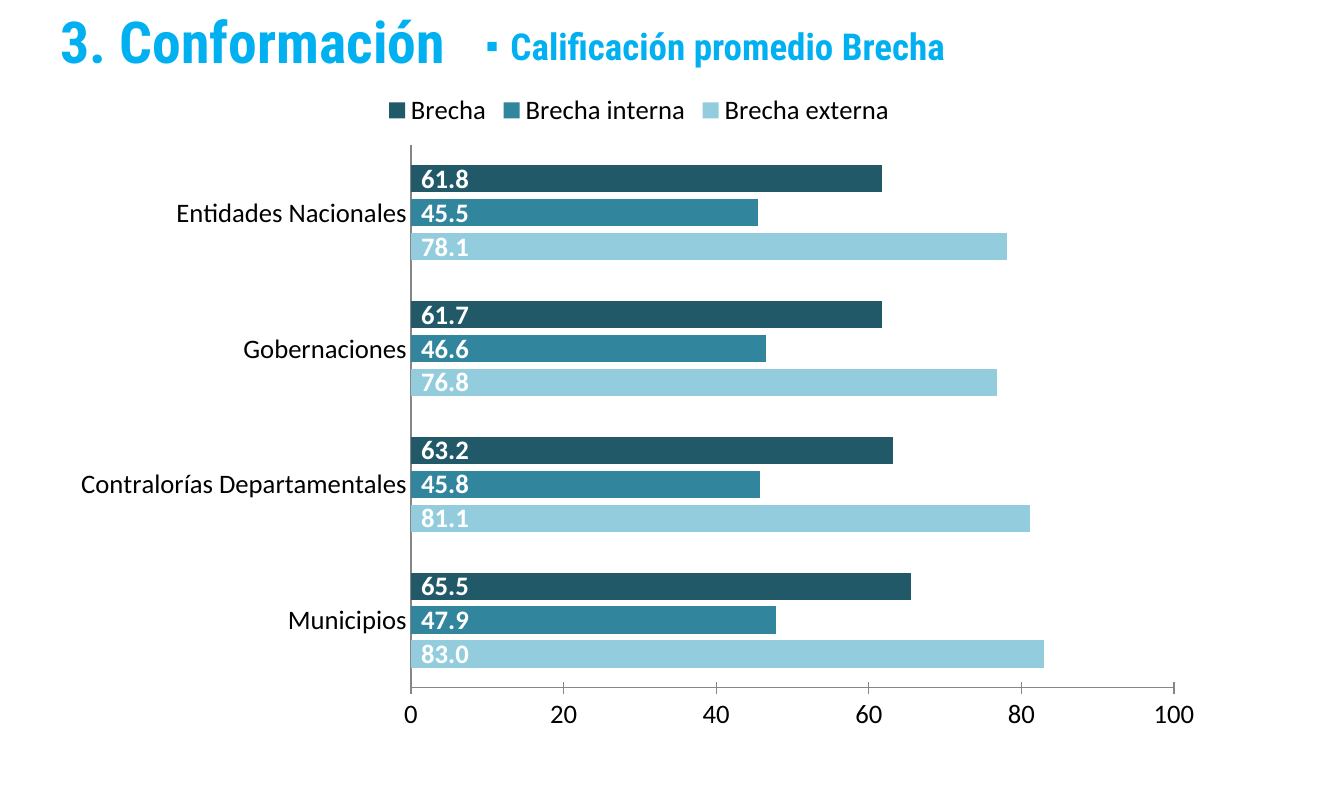
from dataclasses import dataclass

from lxml import etree
from pptx import Presentation
from pptx.chart.chart import Chart
from pptx.chart.data import CategoryChartData
from pptx.dml.color import RGBColor
from pptx.enum.chart import (XL_CHART_TYPE, XL_LABEL_POSITION,
                             XL_LEGEND_POSITION, XL_TICK_MARK)
from pptx.oxml.ns import qn
from pptx.slide import Slide
from pptx.text.text import _Paragraph
from pptx.util import Emu, Pt

EMU_PER_PX = 8572.5
BLACK = RGBColor(0x00, 0x00, 0x00)
WHITE = RGBColor(0xFF, 0xFF, 0xFF)
GRAY = RGBColor(0x86, 0x86, 0x86)
SKY = RGBColor(0x00, 0xB0, 0xF0)
PALE_TEAL = RGBColor(0x93, 0xCD, 0xDD)
TEAL = RGBColor(0x31, 0x85, 0x9C)
DARK_TEAL = RGBColor(0x21, 0x59, 0x68)


@dataclass(frozen=True)
class Box:
    left: int
    top: int
    width: int
    height: int


@dataclass(frozen=True)
class Heading:
    text: str
    box: Box
    size: int
    margin: int
    indent: int = 0
    bullet: str = ""


@dataclass(frozen=True)
class GapSeries:
    name: str
    values: tuple[float, ...]
    color: RGBColor


HEADINGS = (
    Heading("3. Conformación", Box(0, 0, 1210, 114), 39, 50),
    Heading("Calificación promedio Brecha", Box(101, 18, 1210, 67), 25, 399, -25, "▪"),
)
CHART_BOX = Box(59, 81, 1160, 664)
PLOT_BOX = Box(411, 145, 763, 543)
ENTITIES = ("Municipios", "Contralorías Departamentales",
            "Gobernaciones", "Entidades Nacionales")
GAP_SERIES = (
    GapSeries("Brecha externa", (83.0, 81.1, 76.8, 78.1), PALE_TEAL),
    GapSeries("Brecha interna", (47.9, 45.8, 46.6, 45.5), TEAL),
    GapSeries("Brecha", (65.5, 63.2, 61.7, 61.8), DARK_TEAL),
)


def px(length: int) -> Emu:
    return Emu(round(length * EMU_PER_PX))


def place(box: Box) -> tuple[Emu, Emu, Emu, Emu]:
    return px(box.left), px(box.top), px(box.width), px(box.height)


def set_indent(paragraph: _Paragraph, heading: Heading) -> None:
    properties = paragraph._p.get_or_add_pPr()
    properties.set("marL", str(px(heading.margin)))
    properties.set("indent", str(px(heading.indent)))
    if heading.bullet:
        etree.SubElement(properties, qn("a:buFont")).set("typeface", "Arial")
        etree.SubElement(properties, qn("a:buChar")).set("char", heading.bullet)


def add_heading(slide: Slide, heading: Heading) -> None:
    text_frame = slide.shapes.add_textbox(*place(heading.box)).text_frame
    text_frame.word_wrap = True
    text_frame.text = heading.text
    paragraph = text_frame.paragraphs[0]
    set_indent(paragraph, heading)
    font = paragraph.runs[0].font
    font.name = "Roboto Condensed"
    font.size = Pt(heading.size)
    font.bold = True
    font.color.rgb = SKY


def fix_plot_area(chart: Chart) -> None:
    """Pin the inner plot area to PLOT_BOX, as fractions of the chart."""
    plot_area = chart._chartSpace.chart.plotArea
    for automatic_layout in plot_area.findall(qn("c:layout")):
        plot_area.remove(automatic_layout)
    layout = etree.Element(qn("c:layout"))
    plot_area.insert(0, layout)
    manual = etree.SubElement(layout, qn("c:manualLayout"))
    settings = {
        "layoutTarget": "inner", "xMode": "edge", "yMode": "edge",
        "x": (PLOT_BOX.left - CHART_BOX.left) / CHART_BOX.width,
        "y": (PLOT_BOX.top - CHART_BOX.top) / CHART_BOX.height,
        "w": PLOT_BOX.width / CHART_BOX.width,
        "h": PLOT_BOX.height / CHART_BOX.height,
    }
    for name, value in settings.items():
        etree.SubElement(manual, qn(f"c:{name}")).set("val", str(value))


def format_axes(chart: Chart) -> None:
    for axis in (chart.category_axis, chart.value_axis):
        axis.has_major_gridlines = False
        axis.minor_tick_mark = XL_TICK_MARK.NONE
        axis.format.line.color.rgb = GRAY
        axis.format.line.width = Pt(0.75)
    chart.category_axis.major_tick_mark = XL_TICK_MARK.NONE
    value_axis = chart.value_axis
    value_axis.major_tick_mark = XL_TICK_MARK.CROSS
    value_axis.minimum_scale = 0
    value_axis.maximum_scale = 100
    value_axis.major_unit = 20
    value_axis.tick_labels.number_format = "#,##0"
    value_axis.tick_labels.number_format_is_linked = False


def format_series(chart: Chart) -> None:
    plot = chart.plots[0]
    plot.vary_by_categories = False
    plot.gap_width = 150
    plot.overlap = -25
    for series, gap_series in zip(plot.series, GAP_SERIES):
        series.format.fill.solid()
        series.format.fill.fore_color.rgb = gap_series.color
        labels = series.data_labels
        labels.show_value = True
        labels.position = XL_LABEL_POSITION.INSIDE_BASE
        labels.number_format = "_(* #,##0.0_)"
        labels.number_format_is_linked = False
        labels.font.size = Pt(18)
        labels.font.bold = True
        labels.font.color.rgb = WHITE


def add_gap_chart(slide: Slide) -> None:
    chart_data = CategoryChartData()
    chart_data.categories = ENTITIES
    for gap_series in GAP_SERIES:
        chart_data.add_series(gap_series.name, gap_series.values)
    chart = slide.shapes.add_chart(
        XL_CHART_TYPE.BAR_CLUSTERED, *place(CHART_BOX), chart_data).chart
    chart.has_title = False
    chart.font.name = "Calibri"
    chart.font.size = Pt(18)
    chart.font.color.rgb = BLACK
    chart.has_legend = True
    chart.legend.position = XL_LEGEND_POSITION.TOP
    chart.legend.include_in_layout = False
    format_axes(chart)
    format_series(chart)
    fix_plot_area(chart)


def main() -> None:
    presentation = Presentation()
    presentation.slide_width = px(1344)
    presentation.slide_height = px(800)
    slide = presentation.slides.add_slide(presentation.slide_layouts[6])
    for heading in HEADINGS:
        add_heading(slide, heading)
    add_gap_chart(slide)
    presentation.save("out.pptx")


if __name__ == "__main__":
    main()
